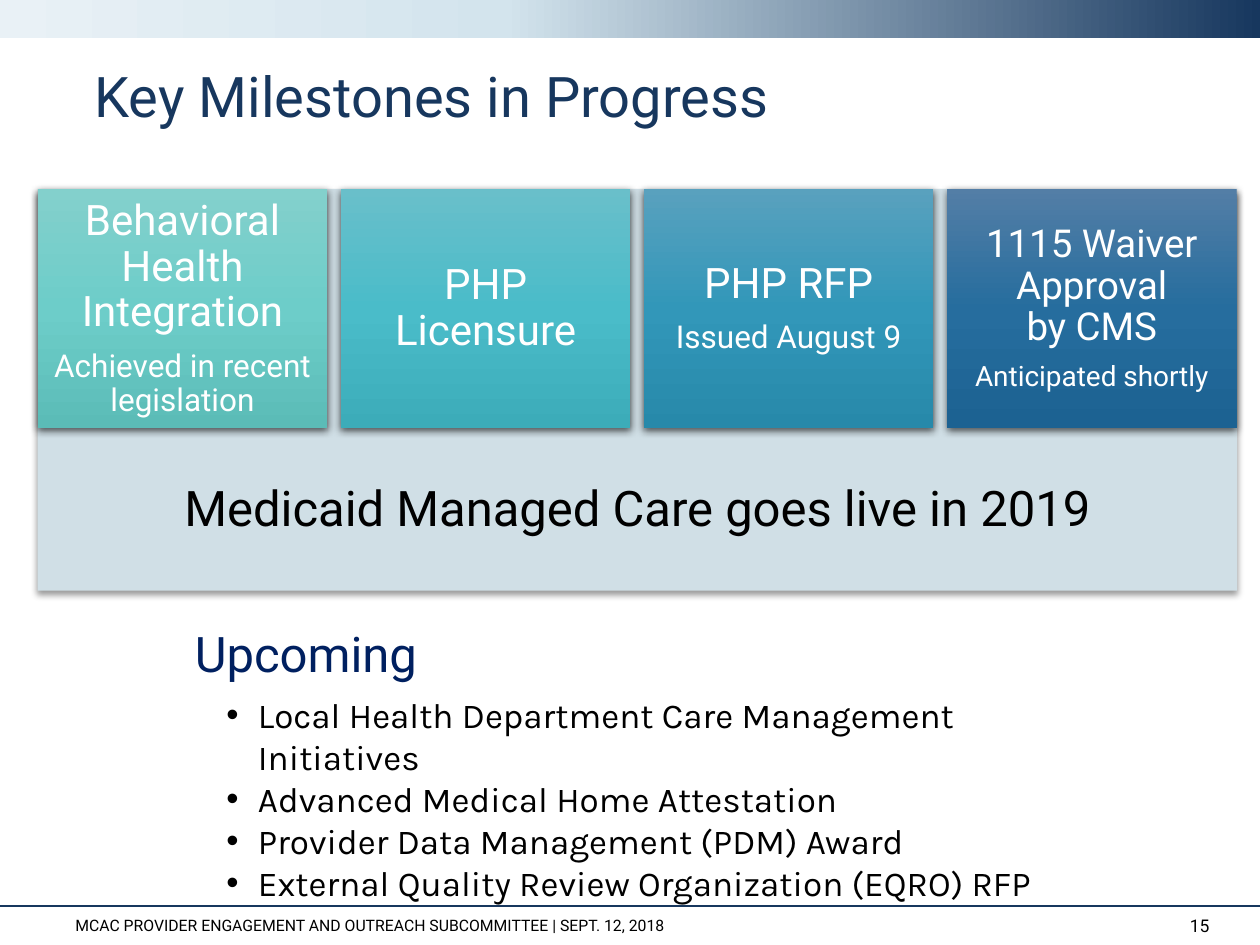
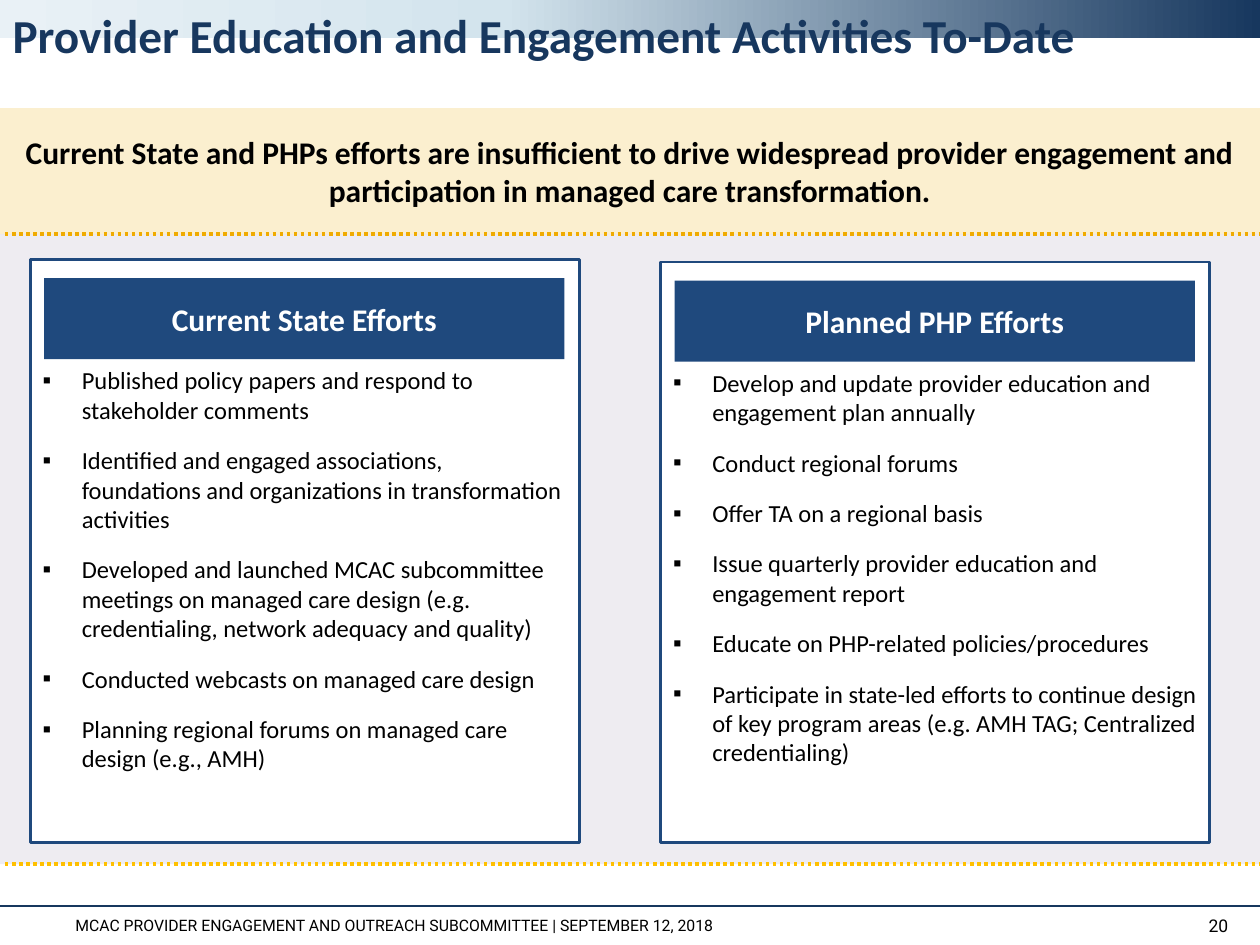
import copy
from dataclasses import dataclass

import pptx
import pptx.util
import pptx.dml.color
import pptx.enum.dml
import pptx.enum.shapes
import pptx.enum.text
import pptx.oxml
import pptx.oxml.ns
from lxml import etree

Cm, Pt = pptx.util.Cm, pptx.util.Pt
RGB = pptx.dml.color.RGBColor.from_string
qn = pptx.oxml.ns.qn
ALIGN = pptx.enum.text.PP_ALIGN
ANCHOR = pptx.enum.text.MSO_ANCHOR
RECT = pptx.enum.shapes.MSO_SHAPE.RECTANGLE
STRAIGHT = pptx.enum.shapes.MSO_CONNECTOR.STRAIGHT
DOTTED = pptx.enum.dml.MSO_LINE.ROUND_DOT


@dataclass
class Style:
    size: float
    font: str = "Roboto"
    color: str = "000000"
    bold: bool = False
    align: ALIGN = ALIGN.LEFT
    after: float = 0
    spacing: float = 1
    bullet: str = ""
    indent: float = 0


class Theme:
    navy = "17375E"
    blue = "1F497D"
    white = "FFFFFF"
    band = ["17375E", "D3E4ED", "E9F1F6"]
    band_stops = [0, 0.6, 1]
    pale_blue = "D0DFE6"
    cream = "FBEFCF"
    purple = "604A7B"
    gold = "F0AB00"
    amber = "FFC000"
    # opacity %, blur pt, distance pt
    panel_shadow = (40, 4, 3)
    card_shadow = (63, 4.5, 1.5)

    footer = Style(9)
    number = Style(10, align=ALIGN.RIGHT)
    title = Style(32, color=navy, spacing=0.9)
    bold_title = Style(27, "Calibri", navy, bold=True)
    go_live = Style(28, align=ALIGN.CENTER, after=22)
    upcoming = Style(28, color="002060", after=6)
    upcoming_item = Style(20, "Karla", bullet="•", indent=1.27 / 2)
    message = Style(18, "Calibri", bold=True, align=ALIGN.CENTER)
    heading = Style(18, "Calibri", white, bold=True, align=ALIGN.CENTER)
    effort = Style(14, "Calibri", after=12, bullet="▪", indent=0.79)


def add_panel(slide, box, colors, stops=(0, 0.5, 1), angle=270, shadow=None):
    """Add a borderless rectangle; a list of three colours makes a gradient."""
    panel = slide.shapes.add_shape(RECT, *map(Cm, box))
    panel.line.fill.background()
    panel.shadow.inherit = False
    if isinstance(colors, str):
        panel.fill.solid()
        panel.fill.fore_color.rgb = RGB(colors)
    else:
        panel.fill.gradient()
        panel.fill.gradient_angle = angle
        stop_list = panel._element.spPr.find(".//" + qn("a:gsLst"))
        stop_list.append(copy.deepcopy(stop_list[0]))
        for stop, color, position in zip(panel.fill.gradient_stops, colors, stops):
            stop.color.rgb = RGB(color)
            stop.position = position
    if shadow:
        opacity, blur, distance = shadow
        effects = panel._element.spPr.find(qn("a:effectLst"))
        outer = etree.SubElement(
            effects, qn("a:outerShdw"), blurRad=str(Pt(blur)),
            dist=str(Pt(distance)), dir="5400000", rotWithShape="0")
        black = etree.SubElement(outer, qn("a:srgbClr"), val="000000")
        etree.SubElement(black, qn("a:alpha"), val=str(opacity * 1000))
    return panel


def write(shape, lines, anchor=ANCHOR.MIDDLE, inset=None):
    """Fill a shape with (text, style) paragraphs."""
    frame = shape.text_frame
    frame.word_wrap = True
    frame.auto_size = pptx.enum.text.MSO_AUTO_SIZE.NONE
    frame.vertical_anchor = anchor
    if inset is not None:
        frame.margin_left = frame.margin_right = Cm(inset)
        frame.margin_top = frame.margin_bottom = Cm(inset)
    for i, (text, style) in enumerate(lines):
        paragraph = frame.add_paragraph() if i else frame.paragraphs[0]
        paragraph.text = text
        paragraph.alignment = style.align
        paragraph.line_spacing = style.spacing
        paragraph.space_after = Pt(style.after)
        paragraph.font.size = Pt(style.size)
        paragraph.font.name = style.font
        paragraph.font.bold = style.bold
        paragraph.font.color.rgb = RGB(style.color)
        if style.bullet:
            # The level-one bullet of the Upcoming list starts one step in
            steps = 2 if style is Theme.upcoming_item else 1
            properties = paragraph._p.get_or_add_pPr()
            properties.set("marL", str(Cm(style.indent * steps)))
            properties.set("indent", str(-Cm(style.indent)))
            bullet_font = etree.Element(qn("a:buFont"), typeface="Arial")
            bullet_char = etree.Element(qn("a:buChar"), char=style.bullet)
            fonts = properties.find(qn("a:defRPr"))
            fonts.addprevious(bullet_font)
            fonts.addprevious(bullet_char)


deck = pptx.Presentation()
deck.slide_width, deck.slide_height = Cm(25.4), Cm(19.05)
title_only = deck.slide_layouts[5]
milestones = deck.slides.add_slide(title_only)
activities = deck.slides.add_slide(title_only)

# Titles, footers and page numbers
FOOTER_TOP, FOOTER_HEIGHT = 18.26, 0.79
pages = [
    (milestones, "Key Milestones in Progress", Theme.title, (1.65, 1.27, 22.2, 1.52),
     "SEPT. 12, 2018", "15", 23.06),
    (activities, "Provider Education and Engagement Activities To-Date",
     Theme.bold_title, (0, 0, 25.15, 1.52), "SEPTEMBER 12, 2018", "20", 23.44),
]
for slide, title, title_style, box, date, number, number_left in pages:
    heading = slide.shapes.title
    heading.left, heading.top, heading.width, heading.height = map(Cm, box)
    write(heading, [(title, title_style)], ANCHOR.TOP)
    footer = f"MCAC PROVIDER ENGAGEMENT AND OUTREACH SUBCOMMITTEE | {date}"
    for text, style, left, width in [(footer, Theme.footer, 1.27, 21.51),
                                     (number, Theme.number, number_left, 1.57)]:
        place = map(Cm, (left, FOOTER_TOP, width, FOOTER_HEIGHT))
        write(slide.shapes.add_textbox(*place), [(text, style)])

# Milestones: four cards on a pale panel
add_panel(milestones, (0.76, 3.81, 24.18, 8.1), Theme.pale_blue,
          shadow=Theme.panel_shadow)
cards = [
    ("Behavioral Health Integration", "Achieved in recent legislation", 24, 18,
     ["83D0CC", "6DCDC9", "5BBCB7"]),
    ("PHP Licensure", "", 24, 18, ["69BFCA", "4ABCC9", "3CACB9"]),
    ("PHP RFP", "Issued August 9", 24, 18, ["59A1BE", "3297B9", "2789AA"]),
    ("1115 Waiver Approval\nby CMS", "Anticipated shortly", 22, 16,
     ["537EA6", "266D9E", "1C6292"]),
]
for i, (milestone, status, milestone_size, status_size, colors) in enumerate(cards):
    card = add_panel(milestones, (0.76 + 6.11 * i, 3.81, 5.84, 4.83), colors,
                     shadow=Theme.card_shadow)
    lines = [(text, Style(size, color=Theme.white, align=ALIGN.CENTER,
                          after=size * 0.35, spacing=0.9))
             for text, size in [(milestone, milestone_size), (status, status_size)]
             if text]
    write(card, lines, inset=0.18)

go_live = milestones.shapes.add_textbox(Cm(0.76), Cm(9.5), Cm(24.18), Cm(1.45))
write(go_live, [("Medicaid Managed Care goes live in 2019", Theme.go_live)], ANCHOR.TOP)

upcoming_items = [
    "Local Health Department Care Management Initiatives",
    "Advanced Medical Home Attestation",
    "Provider Data Management (PDM) Award",
    "External Quality Review Organization (EQRO) RFP",
]
upcoming = milestones.shapes.add_textbox(Cm(3.68), Cm(12.45), Cm(18.77), Cm(5.08))
write(upcoming, [("Upcoming", Theme.upcoming)]
      + [(item, Theme.upcoming_item) for item in upcoming_items], ANCHOR.TOP)

# Activities: message above two columns of efforts
message = add_panel(activities, (0, 2.18, 25.4, 2.54), Theme.cream)
write(message, [("Current State and PHPs efforts are insufficient to drive widespread "
                 "provider engagement and participation in managed care "
                 "transformation.", Theme.message)])
backdrop = add_panel(activities, (-0.05, 4.72, 25.45, 12.7), Theme.purple)
tint = backdrop._element.spPr.find(".//" + qn("a:srgbClr"))
etree.SubElement(tint, qn("a:alpha"), val="10000")

columns = [
    ("Current State Efforts", 0.61, 5.23, [
        "Published policy papers and respond to stakeholder comments",
        "Identified and engaged associations, foundations and organizations in "
        "transformation activities",
        "Developed and launched MCAC subcommittee meetings on managed care design "
        "(e.g. credentialing, network adequacy and quality)",
        "Conducted webcasts on managed care design",
        "Planning regional forums on managed care design (e.g., AMH)",
    ]),
    ("Planned PHP Efforts", 13.32, 5.28, [
        "Develop and update provider education and engagement plan annually",
        "Conduct regional forums",
        "Offer TA on a regional basis",
        "Issue quarterly provider education and engagement report",
        "Educate on PHP-related policies/procedures",
        "Participate in state-led efforts to continue design of key program areas "
        "(e.g. AMH TAG; Centralized credentialing)",
    ]),
]
COLUMN_WIDTH, COLUMN_BOTTOM = 11.07, 16.99
for name, left, top, efforts in columns:
    frame = add_panel(activities, (left, top, COLUMN_WIDTH, COLUMN_BOTTOM - top),
                      Theme.white)
    frame.line.color.rgb = RGB(Theme.blue)
    frame.line.width = Pt(1.5)
    effort_list = activities.shapes.add_textbox(
        Cm(left), Cm(top + 2.01), Cm(COLUMN_WIDTH), Cm(8.5))
    write(effort_list, [(effort, Theme.effort) for effort in efforts], ANCHOR.TOP)
    header = add_panel(activities, (left + 0.28, top + 0.38, 10.49, 1.63), Theme.blue)
    write(header, [(name, Theme.heading)])

# Rules across the slides
rules = [
    (activities, 0.1, 4.72, Theme.gold, 2, DOTTED),
    (activities, 0.1, 17.42, Theme.amber, 2, DOTTED),
    (milestones, 0, FOOTER_TOP, Theme.navy, 1, None),
]
for slide, left, y, color, width, dash in rules:
    rule = slide.shapes.add_connector(STRAIGHT, Cm(left), Cm(y), Cm(25.4), Cm(y))
    rule.line.color.rgb = RGB(color)
    rule.line.width = Pt(width)
    rule.line.dash_style = dash
    etree.SubElement(rule._element.spPr, qn("a:effectLst"))
footer_rule = rule

# The top band and footer rule belong to the layout, behind every title
top_band = add_panel(milestones, (0, 0, 25.4, 0.76), Theme.band,
                     stops=Theme.band_stops, angle=180)
for shared in (footer_rule, top_band):
    title_only.shapes._spTree.insert(2, shared._element)

deck.save("out.pptx")
